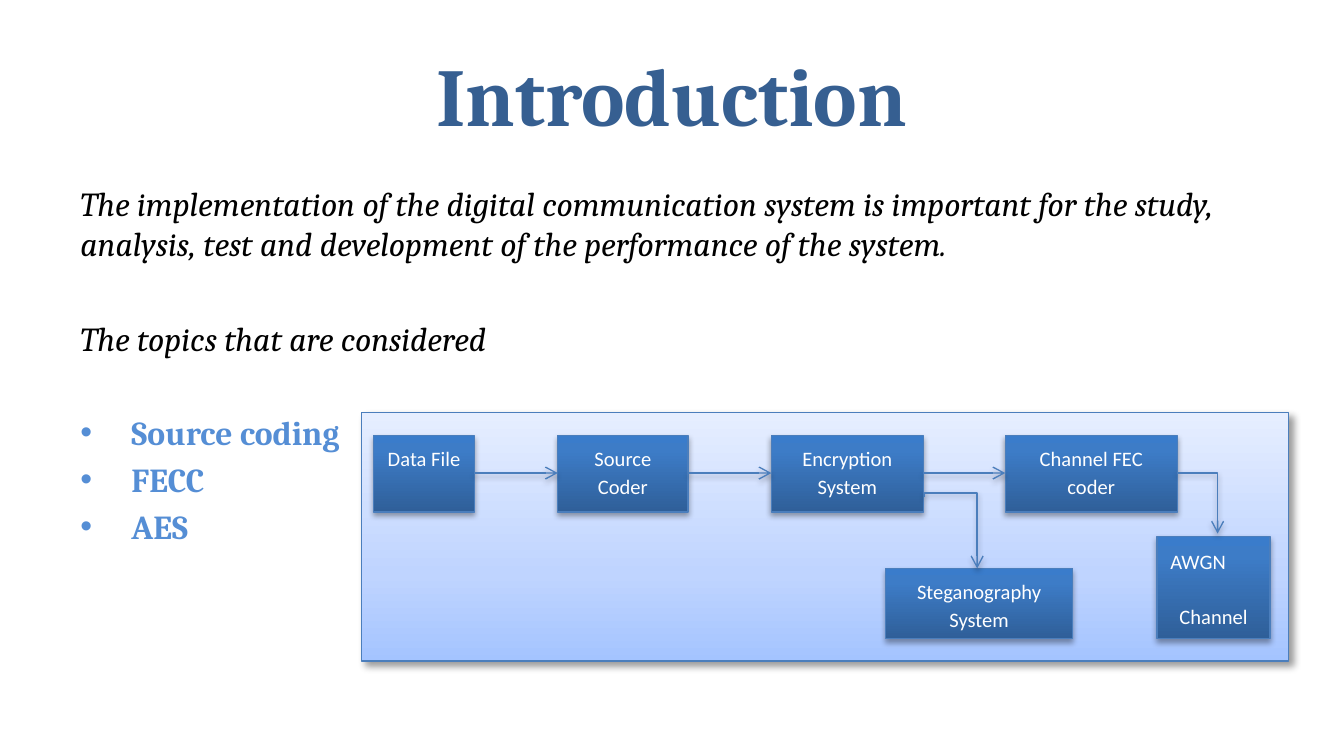
from dataclasses import dataclass
from lxml import etree
from pptx import Presentation
from pptx.dml.color import RGBColor
from pptx.enum.shapes import MSO_CONNECTOR, MSO_SHAPE
from pptx.enum.text import MSO_ANCHOR, PP_ALIGN
from pptx.oxml import parse_xml
from pptx.oxml.ns import nsdecls, qn
from pptx.util import Inches, Pt

RECT = MSO_SHAPE.RECTANGLE
STRAIGHT, ELBOW = MSO_CONNECTOR.STRAIGHT, MSO_CONNECTOR.ELBOW
TOP, MIDDLE = MSO_ANCHOR.TOP, MSO_ANCHOR.MIDDLE
LEFT, CENTER = PP_ALIGN.LEFT, PP_ALIGN.CENTER


@dataclass(frozen=True)
class Theme:
    """Hold the colours, fonts and sizes of the slide."""
    serif: str = "Cambria"
    sans: str = "Calibri"
    title: str = "365F91"
    body: str = "000000"
    topic: str = "558ED5"
    label: str = "FFFFFF"
    edge: str = "4B7EBC"
    panel: tuple = ((0, "A4C4FF"), (35, "BFD4FF"), (100, "E6EEFF"))
    block: tuple = ((0, "2F5F99"), (80, "3D7CC7"), (100, "3A7CCB"))
    deep: tuple = (40, 4, 3, 45)
    soft: tuple = (35, 3.1, 1.8, 90)
    title_size: int = 44
    body_size: int = 18
    label_size: int = 11
    edge_size: float = 0.75


THEME = Theme()


def style(para, font, size, color, bold=False, italic=False):
    """Format every run of a paragraph."""
    for run in para.runs:
        run.font.name, run.font.size = font, Pt(size)
        run.font.bold, run.font.italic = bold, italic
        run.font.color.rgb = RGBColor.from_string(color)


def shade(item, glow):
    """Give a shape or connector its edge and shadow."""
    item.line.color.rgb = RGBColor.from_string(THEME.edge)
    item.line.width = Pt(THEME.edge_size)
    alpha, blur, dist, angle = glow
    item._element.spPr.append(parse_xml(
        f'<a:effectLst {nsdecls("a")}><a:outerShdw blurRad="{Pt(blur)}" '
        f'dist="{Pt(dist)}" dir="{angle * 60000}" rotWithShape="0">'
        f'<a:srgbClr val="000000"><a:alpha val="{alpha * 1000}"/></a:srgbClr>'
        '</a:outerShdw></a:effectLst>'))


def add_rect(slide, area, stops, glow):
    """Add a rectangle with an upward gradient."""
    box = slide.shapes.add_shape(RECT, *map(Inches, area))
    marks = "".join(f'<a:gs pos="{pos * 1000}"><a:srgbClr val="{tone}"/></a:gs>'
                    for pos, tone in stops)
    box._element.spPr.append(parse_xml(
        f'<a:gradFill {nsdecls("a")} rotWithShape="1"><a:gsLst>{marks}</a:gsLst>'
        '<a:lin ang="16200000" scaled="0"/></a:gradFill>'))
    shade(box, glow)
    return box


def add_block(slide, area, lines, anchor=TOP):
    """Add a labelled block from (text, alignment, space after) lines."""
    frame = add_rect(slide, area, THEME.block, THEME.soft).text_frame
    frame.word_wrap, frame.vertical_anchor = True, anchor
    frame.text = "\n".join(line[0] for line in lines)
    for para, (_, align, after) in zip(frame.paragraphs, lines):
        para.alignment, para.line_spacing = align, 1.15
        para.space_after = Pt(after)
        style(para, THEME.sans, THEME.label_size, THEME.label)


def add_arrow(slide, start, end, bend=None, turn=0):
    """Add an arrow, bent at a share of its width if bend is given."""
    kind = STRAIGHT if bend is None else ELBOW
    arrow = slide.shapes.add_connector(kind, *map(Inches, start + end))
    spot = arrow._element.spPr
    if bend is not None:
        guides = spot.find(qn("a:prstGeom")).get_or_add_avLst()
        etree.SubElement(guides, qn("a:gd"), name="adj1",
                         fmla=f"val {round(bend * 100000)}")
    if turn:
        spot.find(qn("a:xfrm")).set("rot", str(turn * 60000))
    shade(arrow, THEME.soft)
    etree.SubElement(spot.find(qn("a:ln")), qn("a:tailEnd"), type="arrow")


def add_text(slide, area, lines):
    """Add a wrapping text box and return its frame."""
    frame = slide.shapes.add_textbox(*map(Inches, area)).text_frame
    frame.word_wrap = True
    frame.text = "\n".join(lines)
    return frame


def add_title(slide, text):
    """Add the centred slide title."""
    frame = add_text(slide, (0.5, 0.23, 9, 0.94), [text])
    frame.vertical_anchor = MIDDLE
    para = frame.paragraphs[0]
    para.alignment = CENTER
    style(para, THEME.serif, THEME.title_size, THEME.title, bold=True)


def add_body(slide, prose, topics):
    """Add the prose and the bulleted topics below it."""
    frame = add_text(slide, (0.5, 1.31, 9, 3.71), prose + topics)
    for num, para in enumerate(frame.paragraphs):
        wide = 0 < num <= len(prose)
        para.space_before = Pt(29 if wide else 3.6)
        if num < len(prose):
            style(para, THEME.serif, THEME.body_size, THEME.body, italic=True)
            continue
        style(para, THEME.serif, THEME.body_size, THEME.topic, bold=True)
        props = para._p.get_or_add_pPr()
        props.set("marL", str(Inches(0.38)))
        props.set("indent", str(-Inches(0.38)))
        etree.SubElement(props, qn("a:buFont"), typeface="Arial")
        etree.SubElement(props, qn("a:buChar"), char="•")


def add_chain(slide):
    """Add the panel with the blocks of the system and their arrows."""
    add_rect(slide, (2.69, 3.07, 6.9, 1.85), THEME.panel, THEME.deep)
    chain = [("Data File", 2.78, 0.75), ("Source Coder", 4.15, 0.97),
             ("Encryption System", 5.74, 1.13), ("Channel FEC coder", 7.48, 1.28)]
    for text, left, width in chain:
        add_block(slide, (left, 3.24, width, 0.57), [(text, CENTER, 10)])
    for (_, left, width), (_, end, _) in zip(chain, chain[1:]):
        add_arrow(slide, (left + width, 3.52), (end, 3.52))
    add_block(slide, (6.59, 4.23, 1.39, 0.52),
              [("Steganography System", CENTER, 10)])
    add_block(slide, (8.61, 3.99, 0.84, 0.76),
              [("AWGN", LEFT, 14.5), ("Channel", CENTER, 10)], MIDDLE)
    add_arrow(slide, (8.76, 3.52), (9.06, 3.97), bend=1)
    add_arrow(slide, (7.34, 3.77), (6.81, 4.16), bend=-0.06, turn=270)


def main():
    """Build and save the slide."""
    deck = Presentation()
    deck.slide_width = Inches(10)
    deck.slide_height = deck.slide_width * 9 // 16
    slide = deck.slides.add_slide(deck.slide_layouts[6])
    add_title(slide, "Introduction")
    add_body(slide, [
        "The implementation of the digital communication system is important "
        "for the study, analysis, test and development of the performance of "
        "the system.",
        "The topics that are considered",
    ], ["Source coding", "FECC", "AES"])
    add_chain(slide)
    deck.save("out.pptx")


if __name__ == "__main__":
    main()
